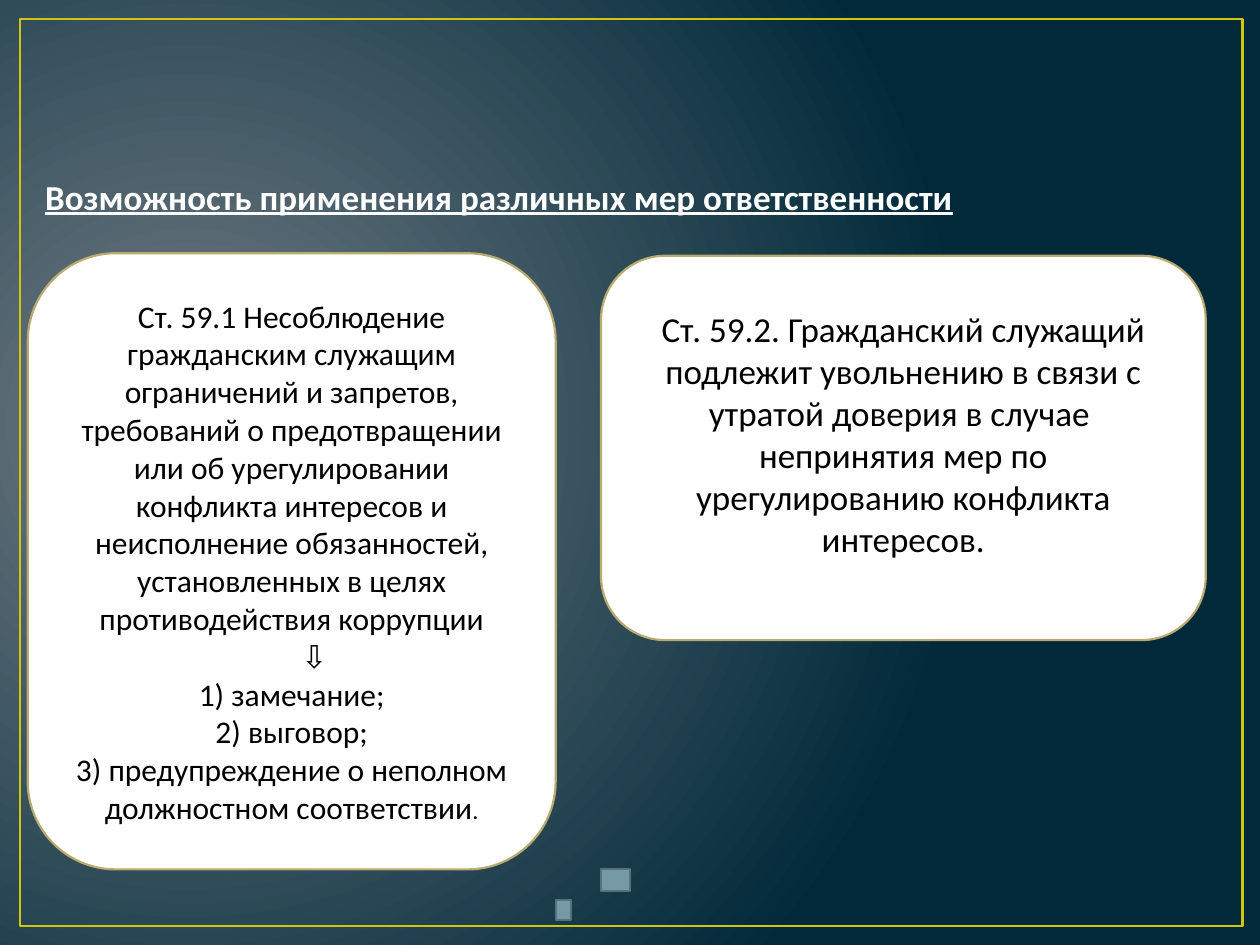
from dataclasses import dataclass

from lxml import etree
from pptx import Presentation
from pptx.dml.color import RGBColor
from pptx.enum.shapes import MSO_SHAPE
from pptx.enum.text import MSO_ANCHOR, PP_ALIGN
from pptx.oxml.ns import qn
from pptx.util import Inches, Pt

RECTANGLE = MSO_SHAPE.RECTANGLE
ROUNDED = MSO_SHAPE.ROUNDED_RECTANGLE
CENTER = PP_ALIGN.CENTER
LEFT = PP_ALIGN.LEFT
MIDDLE = MSO_ANCHOR.MIDDLE


@dataclass(frozen=True)
class Theme:
    font: str = "Calibri"
    glow: str = "717C84"
    night: str = "01293A"
    frame: str = "CFC60D"
    card: str = "FFFFFF"
    card_edge: str = "B9AB6F"
    marker: str = "759AA5"
    marker_edge: str = "57727A"
    light_text: str = "FFFFFF"
    dark_text: str = "000000"
    large: int = 20
    body: int = 18
    small: int = 14
    frame_line: float = 1.5
    edge_line: float = 1.25


class SlideBuilder:
    """Draws on one page; places are (left, top, width, height) in percent of it."""

    def __init__(self, deck, theme):
        self.deck = deck
        self.theme = theme
        self.page = deck.slides.add_slide(deck.slide_layouts[6])

    def place(self, shares):
        sides = (self.deck.slide_width, self.deck.slide_height) * 2
        return [round(side * share / 100) for side, share in zip(sides, shares)]

    def background(self):
        """Fill the page with a round glow centred near its left edge."""
        fill = self.page.background.fill
        fill.gradient()
        for stop, color in zip(fill.gradient_stops, (self.theme.glow, self.theme.night)):
            stop.color.rgb = RGBColor.from_string(color)
        gradient = self.page.element.find(".//" + qn("a:gradFill"))
        linear = gradient.find(qn("a:lin"))
        circle = etree.Element(qn("a:path"), {"path": "circle"})
        etree.SubElement(circle, qn("a:fillToRect"),
                         l="15000", t="50000", r="85000", b="60000")
        gradient.replace(linear, circle)

    def panel(self, kind, shares, fill, edge, width):
        box = self.page.shapes.add_shape(kind, *self.place(shares))
        box.shadow.inherit = False
        if fill:
            box.fill.solid()
            box.fill.fore_color.rgb = RGBColor.from_string(fill)
        else:
            box.fill.background()
        box.line.color.rgb = RGBColor.from_string(edge)
        box.line.width = Pt(width)
        return box

    def span(self, para, text, size, color):
        span = para.add_run()
        span.text = text
        span.font.name = self.theme.font
        span.font.size = Pt(size)
        span.font.color.rgb = RGBColor.from_string(color)
        return span

    def heading(self, shares, text):
        box = self.page.shapes.add_textbox(*self.place(shares))
        box.text_frame.word_wrap = True
        para = box.text_frame.paragraphs[0]
        para.alignment = LEFT
        para.space_after = Pt(12)
        para._p.get_or_add_pPr().set("marL", str(Inches(0.26)))
        span = self.span(para, text, self.theme.large, self.theme.light_text)
        span.font.bold = span.font.underline = True

    def card(self, shares, paragraphs):
        """Add a rounded card; each paragraph is a list of (text, size) spans."""
        box = self.panel(ROUNDED, shares, self.theme.card,
                         self.theme.card_edge, self.theme.edge_line)
        frame = box.text_frame
        frame.word_wrap = True
        frame.vertical_anchor = MIDDLE
        for index, spans in enumerate(paragraphs):
            para = frame.add_paragraph() if index else frame.paragraphs[0]
            para.alignment = CENTER
            for text, size in spans:
                self.span(para, text, size, self.theme.dark_text)
        return frame

    def marker(self, shares):
        self.panel(RECTANGLE, shares, self.theme.marker,
                   self.theme.marker_edge, self.theme.edge_line)


def main():
    theme = Theme()
    deck = Presentation()
    deck.slide_width, deck.slide_height = Inches(10), Inches(7.5)
    slide = SlideBuilder(deck, theme)

    slide.background()
    slide.panel(RECTANGLE, (1.6, 2, 97, 96), None, theme.frame, theme.frame_line)
    slide.heading((0, 17.87, 96.9, 5.87),
                  "Возможность применения различных мер ответственности")

    violation = slide.card((2.2, 26.8, 41.9, 65.2), [
        [("Ст. 59.1 Несоблюдение гражданским служащим ограничений и запретов, "
          "требований о предотвращении или об урегулировании конфликта интересов "
          "и неисполнение обязанностей, установленных в целях противодействия "
          "коррупции", theme.body)],
        [("⇩", theme.body)],
        [("1) замечание;", theme.body)],
        [("2) выговор;", theme.body)],
        [("3) предупреждение о неполном должностном соответствии", theme.body),
         (".", theme.small)],
    ])
    arrow = violation.paragraphs[1]
    arrow._p.get_or_add_pPr().set("marL", str(Inches(0.36)))

    dismissal = slide.card((47.7, 27.07, 48, 40.67), [
        [("Ст. 59.2. Гражданский служащий подлежит увольнению в связи с утратой "
          "доверия в случае ", theme.large)],
        [("непринятия мер по урегулированию конфликта интересов.", theme.large)],
    ])
    dismissal.margin_bottom = Inches(0.28)

    for shares in ((47.7, 92, 2.3, 2.27), (44.1, 95.2, 1.2, 2.13)):
        slide.marker(shares)

    deck.save("out.pptx")


if __name__ == "__main__":
    main()
